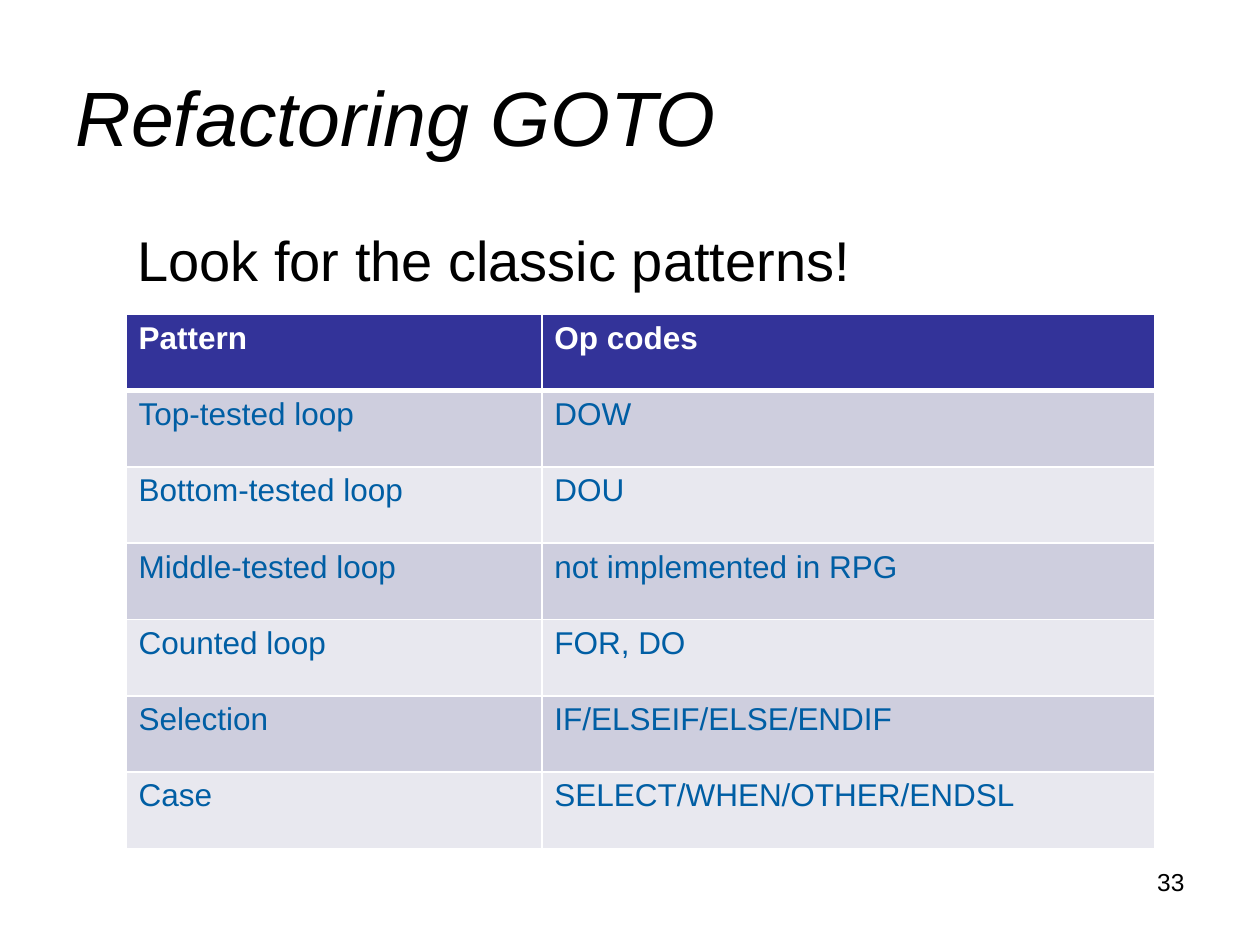
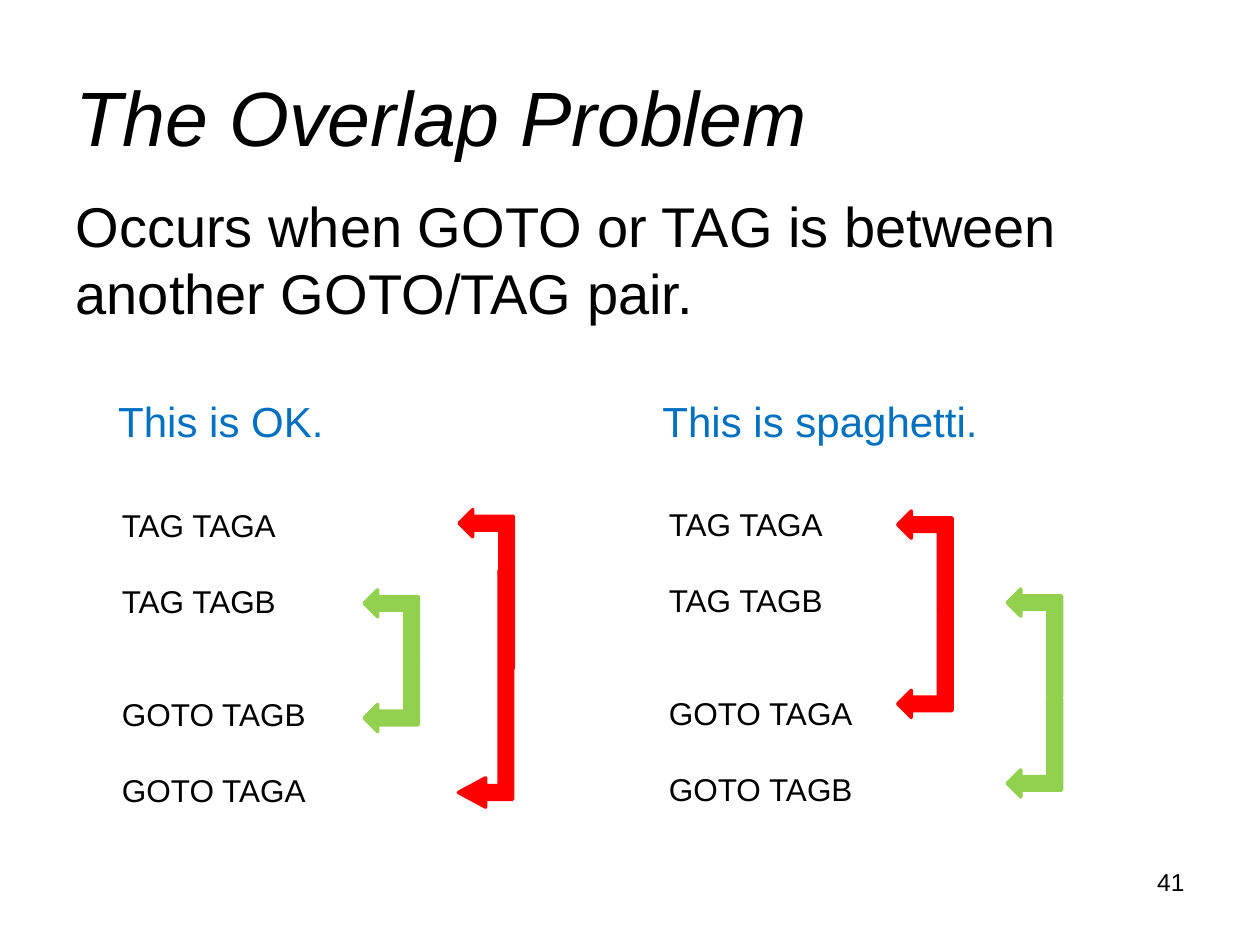
"""Build two slides on refactoring GOTO: a pattern table and the overlap problem."""
from dataclasses import dataclass, field
from typing import Any, NamedTuple

from lxml.etree import SubElement
from pptx import Presentation
from pptx.dml.color import RGBColor
from pptx.enum.shapes import MSO_SHAPE
from pptx.enum.text import MSO_ANCHOR as Anchor
from pptx.enum.text import MSO_AUTO_SIZE as AutoSize
from pptx.enum.text import PP_ALIGN as Align
from pptx.oxml.ns import qn
from pptx.util import Pt


@dataclass(frozen=True)
class Theme:
    """Colours, type sizes and font shared by the slides."""
    font: str = "Arial"
    black: str = "000000"
    white: str = "FFFFFF"
    header: str = "333399"
    bands: tuple[str, str] = ("CECEDE", "E8E8EF")
    cell_text: str = "005EA4"
    caption: str = "0070C0"
    red: str = "FF0000"
    green: str = "92D050"
    title_size: float = 44
    body_size: float = 32
    caption_size: float = 24
    text_size: float = 18
    number_size: float = 14
    line_height: float = 1.2


THEME = Theme()


class Frame(NamedTuple):
    """Left, top, width and height in points."""
    left: float
    top: float
    width: float
    height: float


class Style(NamedTuple):
    """Look of a piece of text."""
    size: float
    color: str = THEME.black
    bold: bool = False
    italic: bool = False


class Line(NamedTuple):
    """One line of text with the number of empty lines above it."""
    text: str
    gap: int = 0


@dataclass(frozen=True)
class BracketHalf:
    """Half of a bracket: a bent arrow that points left at its top or bottom end."""
    left: float
    top: float
    length: float
    color: str
    points_at_top: bool
    adjustments: tuple[float, ...] = field(default=())


@dataclass(frozen=True)
class Example:
    """A captioned code listing."""
    caption: str
    caption_frame: Frame
    code: tuple[Line, ...]
    code_frame: Frame


TITLE_STYLE = Style(THEME.title_size, italic=True)
BODY_STYLE = Style(THEME.body_size)
CAPTION_STYLE = Style(THEME.caption_size, THEME.caption)
CODE_STYLE = Style(THEME.text_size)
NUMBER_STYLE = Style(THEME.number_size)
HEADER_STYLE = Style(THEME.text_size, THEME.white, bold=True)
CELL_STYLE = Style(THEME.text_size, THEME.cell_text)

TITLE_FRAME = Frame(36, 21.6, 648, 89.3)
NUMBER_FRAME = Frame(491.8, 491.8, 192.2, 37.4)
BRACKET_WIDTH = 31

COLUMN_WIDTHS = (237.6, 350.4)
ROW_HEIGHT = 43.6
PATTERNS = (
    ("Pattern", "Op codes"),
    ("Top-tested loop", "DOW"),
    ("Bottom-tested loop", "DOU"),
    ("Middle-tested loop", "not implemented in RPG"),
    ("Counted loop", "FOR, DO"),
    ("Selection", "IF/ELSEIF/ELSE/ENDIF"),
    ("Case", "SELECT/WHEN/OTHER/ENDSL"),
)

EXAMPLES = (
    Example(
        "This is OK.", Frame(60.5, 222.5, 223.2, 36),
        (Line("TAG TAGA"), Line("TAG TAGB", 1), Line("GOTO TAGB", 2), Line("GOTO TAGA", 1)),
        Frame(62.6, 285.8, 262.1, 181.4),
    ),
    Example(
        "This is spaghetti.", Frame(371.5, 222.5, 223.2, 36),
        (Line("TAG TAGA"), Line("TAG TAGB", 1), Line("GOTO TAGA", 2), Line("GOTO TAGB", 1)),
        Frame(375.1, 285.1, 295.9, 181.4),
    ),
)

BRACKETS = (
    BracketHalf(262.4, 291.2, 90.7, THEME.red, True),
    BracketHalf(208.1, 337, 39.6, THEME.green, True),
    BracketHalf(262, 325.8, 135.4, THEME.red, False, (0.25, 0.27, 0.5)),
    BracketHalf(208.1, 376.2, 41.8, THEME.green, False),
    BracketHalf(513, 292, 56.2, THEME.red, True),
    BracketHalf(513, 348.1, 61.9, THEME.red, False),
    BracketHalf(575.6, 336.6, 61.9, THEME.green, True),
    BracketHalf(575.6, 399.2, 56.2, THEME.green, False),
)


def set_attributes(target: Any, values: dict[str, Any]) -> None:
    """Set each named attribute on the target."""
    for name, value in values.items():
        setattr(target, name, value)


def place(shape: Any, frame: Frame) -> None:
    """Move and size a shape."""
    set_attributes(shape, {name: Pt(value) for name, value in frame._asdict().items()})


def add_run(paragraph: Any, text: str, style: Style) -> None:
    """Add a formatted run to a paragraph."""
    run = paragraph.add_run()
    run.text = text
    set_attributes(run.font, {
        "name": THEME.font, "size": Pt(style.size),
        "bold": style.bold, "italic": style.italic,
    })
    run.font.color.rgb = RGBColor.from_string(style.color)


def write_lines(shape: Any, lines: tuple[Line, ...], style: Style,
                align: Align = Align.LEFT, anchor: Anchor = Anchor.TOP) -> None:
    """Fill a shape with lines of text at a fixed line height."""
    text_frame = shape.text_frame
    set_attributes(text_frame, {
        "word_wrap": True, "auto_size": AutoSize.NONE, "vertical_anchor": anchor,
    })
    height = style.size * THEME.line_height
    for index, line in enumerate(lines):
        paragraph = text_frame.add_paragraph() if index else text_frame.paragraphs[0]
        set_attributes(paragraph, {
            "alignment": align, "line_spacing": Pt(height),
            "space_before": Pt(line.gap * height), "space_after": Pt(0),
        })
        add_run(paragraph, line.text, style)


def add_text(slide: Any, frame: Frame, lines: tuple[Line, ...], style: Style,
             align: Align = Align.LEFT) -> None:
    """Add a text box."""
    box = slide.shapes.add_textbox(*(Pt(value) for value in frame))
    write_lines(box, lines, style, align)


def add_slide(presentation: Any, title: str, body: str, body_frame: Frame, number: int) -> Any:
    """Add a slide with title, unbulleted body and page number."""
    slide = presentation.slides.add_slide(presentation.slide_layouts[1])
    title_shape, body_shape = slide.shapes.title, slide.placeholders[1]
    place(title_shape, TITLE_FRAME)
    write_lines(title_shape, (Line(title),), TITLE_STYLE, anchor=Anchor.MIDDLE)
    place(body_shape, body_frame)
    write_lines(body_shape, (Line(body),), BODY_STYLE)
    properties = body_shape.text_frame.paragraphs[0]._p.get_or_add_pPr()
    set_xml = {"marL": "0", "indent": "0"}
    properties.attrib.update(set_xml)
    SubElement(properties, qn("a:buNone"))
    add_text(slide, NUMBER_FRAME, (Line(str(number)),), NUMBER_STYLE, Align.RIGHT)
    return slide


def add_borders(cell: Any, widths: dict[str, float]) -> None:
    """Draw white cell borders of the given widths."""
    properties = cell._tc.get_or_add_tcPr()
    for side, width in widths.items():
        border = SubElement(properties, qn(f"a:ln{side}"), w=str(Pt(width)))
        fill = SubElement(border, qn("a:solidFill"))
        SubElement(fill, qn("a:srgbClr"), val=THEME.white)


def add_pattern_table(slide: Any, left: float, top: float) -> None:
    """Add the table of patterns and op codes."""
    table = slide.shapes.add_table(
        len(PATTERNS), len(COLUMN_WIDTHS), Pt(left), Pt(top),
        Pt(sum(COLUMN_WIDTHS)), Pt(ROW_HEIGHT * len(PATTERNS))).table
    for column, width in zip(table.columns, COLUMN_WIDTHS):
        column.width = Pt(width)
    for row_index, texts in enumerate(PATTERNS):
        table.rows[row_index].height = Pt(ROW_HEIGHT)
        is_header = row_index == 0
        color = THEME.header if is_header else THEME.bands[(row_index - 1) % 2]
        borders = {"L": 1, "R": 1, "T": 3 if row_index == 1 else 1, "B": 3 if is_header else 1}
        for column_index, text in enumerate(texts):
            cell = table.cell(row_index, column_index)
            add_run(cell.text_frame.paragraphs[0], text, HEADER_STYLE if is_header else CELL_STYLE)
            add_borders(cell, borders)
            cell.fill.solid()
            cell.fill.fore_color.rgb = RGBColor.from_string(color)


def add_bracket_half(slide: Any, half: BracketHalf) -> None:
    """Add a bent arrow turned on its side around its centre."""
    shift = (half.length - BRACKET_WIDTH) / 2
    shape = slide.shapes.add_shape(
        MSO_SHAPE.BENT_UP_ARROW, Pt(half.left - shift), Pt(half.top + shift),
        Pt(half.length), Pt(BRACKET_WIDTH))
    shape.rotation = 270 if half.points_at_top else 90
    if not half.points_at_top:
        shape.element.spPr.get_or_add_xfrm().set("flipV", "1")
    for index, value in enumerate(half.adjustments):
        shape.adjustments[index] = value
    color = RGBColor.from_string(half.color)
    shape.shadow.inherit = False
    shape.fill.solid()
    shape.fill.fore_color.rgb = color
    shape.line.color.rgb = color
    shape.line.width = Pt(2)
    SubElement(shape.element.spPr.find(qn("a:ln")), qn("a:round"))


def main() -> None:
    """Build and save the presentation."""
    presentation = Presentation()
    set_attributes(presentation, {"slide_width": Pt(720), "slide_height": Pt(540)})

    patterns = add_slide(presentation, "Refactoring GOTO", "Look for the classic patterns!",
                         Frame(71.3, 125.3, 499, 54), 33)
    add_pattern_table(patterns, 72, 179.6)

    overlap = add_slide(presentation, "The Overlap Problem",
                        "Occurs when GOTO or TAG is between another GOTO/TAG pair.",
                        Frame(36, 105.8, 648, 89.3), 41)
    for example in EXAMPLES:
        add_text(overlap, example.caption_frame, (Line(example.caption),), CAPTION_STYLE)
        add_text(overlap, example.code_frame, example.code, CODE_STYLE)
    for half in BRACKETS:
        add_bracket_half(overlap, half)

    presentation.save("out.pptx")


if __name__ == "__main__":
    main()
